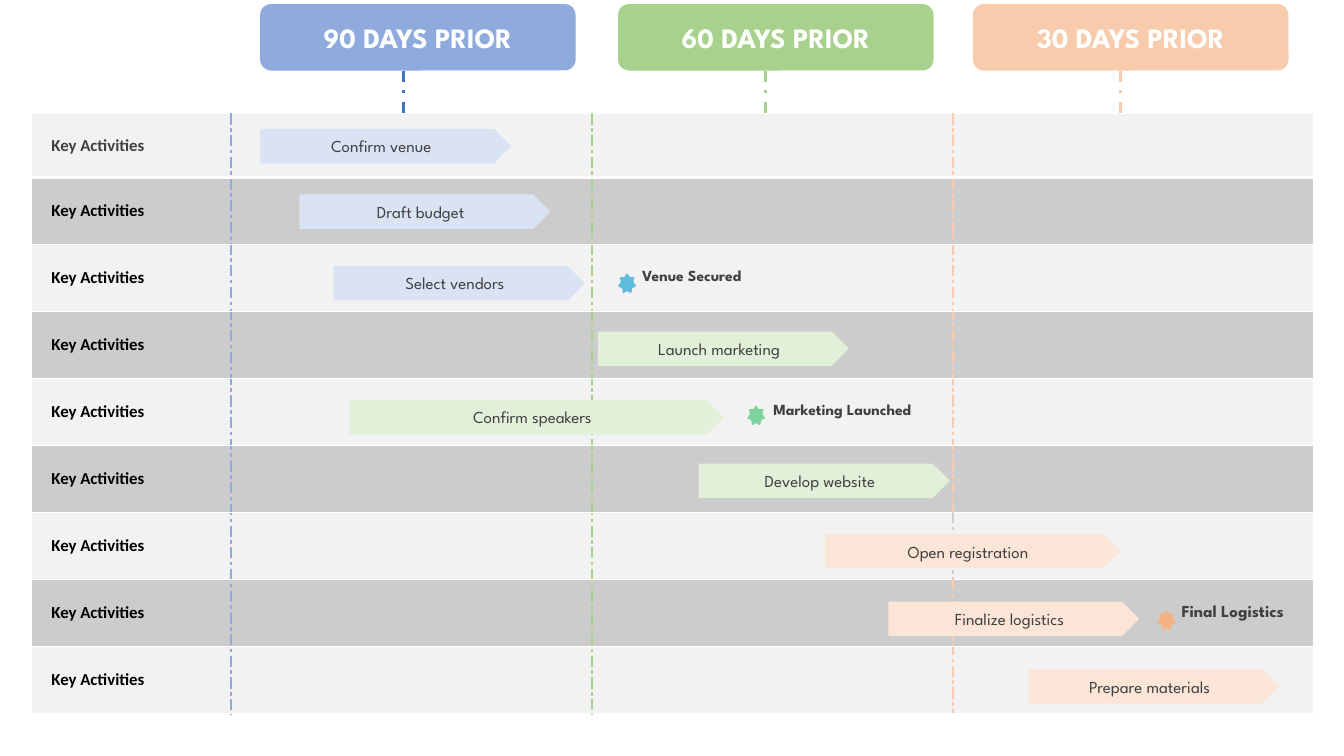
from lxml import etree
from pptx import Presentation
from pptx.dml.color import RGBColor
from pptx.enum.dml import MSO_LINE
from pptx.enum.shapes import MSO_CONNECTOR, MSO_SHAPE
from pptx.enum.text import MSO_ANCHOR, PP_ALIGN
from pptx.oxml.ns import qn
from pptx.util import Inches, Pt

WHITE = RGBColor(0xFF, 0xFF, 0xFF)
BLACK = RGBColor(0x00, 0x00, 0x00)
CHARCOAL = RGBColor(0x40, 0x40, 0x40)
LIGHT_ROW = RGBColor(0xF2, 0xF2, 0xF2)
DARK_ROW = RGBColor(0xCC, 0xCC, 0xCC)
GRAY_DIVIDER = RGBColor(0xD0, 0xCE, 0xCE)
BLUE = RGBColor(0x8F, 0xAA, 0xDC)
GREEN = RGBColor(0xA9, 0xD1, 0x8E)
PEACH = RGBColor(0xF8, 0xCB, 0xAD)
STEM_BLUE = RGBColor(0x44, 0x72, 0xC4)
PALE_BLUE = RGBColor(0xDA, 0xE3, 0xF3)
PALE_GREEN = RGBColor(0xE2, 0xF0, 0xD9)
PALE_PEACH = RGBColor(0xFB, 0xE5, 0xD6)
STAR_BLUE = RGBColor(0x5D, 0xBB, 0xDC)
STAR_GREEN = RGBColor(0x7E, 0xD3, 0x9C)
STAR_ORANGE = RGBColor(0xF4, 0xB1, 0x83)

DISPLAY_FONT = "League Spartan"
ROW_COUNT = 9
GRID_LEFT, GRID_TOP, GRID_HEIGHT = 0.31, 1.13, 5.95
FIRST_ROW_HEIGHT = 0.63
COLUMN_WIDTHS = [1.98, 3.58, 3.58, 3.58]
DIVIDERS = [WHITE, BLUE, GREEN, PEACH, WHITE]

# Phase: title, left, colour, stem x, stem colour
PHASES = [
    ("90 DAYS PRIOR", 2.58, BLUE, 4.0, STEM_BLUE),
    ("60 DAYS PRIOR", 6.13, GREEN, 7.59, GREEN),
    ("30 DAYS PRIOR", 9.65, PEACH, 11.11, PEACH),
]
# Activity: name, left, top, width, colour
ACTIVITIES = [
    ("Confirm venue", 2.58, 1.28, 2.49, PALE_BLUE),
    ("Draft budget", 2.97, 1.93, 2.49, PALE_BLUE),
    ("Select vendors", 3.31, 2.64, 2.49, PALE_BLUE),
    ("Launch marketing", 5.93, 3.29, 2.49, PALE_GREEN),
    ("Confirm speakers", 3.47, 3.97, 3.71, PALE_GREEN),
    ("Develop website", 6.93, 4.6, 2.49, PALE_GREEN),
    ("Open registration", 8.18, 5.3, 2.93, PALE_PEACH),
    ("Finalize logistics", 8.81, 5.97, 2.49, PALE_PEACH),
    ("Prepare materials", 10.2, 6.64, 2.49, PALE_PEACH),
]
# Milestone: name, row, column, indent, text size, star left, star top, colour
MILESTONES = [
    ("Venue Secured", 2, 2, 0.5, 11, 6.13, 2.71, STAR_BLUE),
    ("Marketing Launched", 4, 2, 1.8, 11, 7.41, 4.02, STAR_GREEN),
    ("Final Logistics", 7, 3, 2.27, 12, 11.48, 6.05, STAR_ORANGE),
]


def write_text(frame, text, size=12, font=DISPLAY_FONT, color=CHARCOAL,
               bold=False, align=PP_ALIGN.CENTER):
    paragraph = frame.paragraphs[0]
    paragraph.alignment = align
    run = paragraph.add_run()
    run.text = text
    run.font.size = Pt(size)
    run.font.name = font
    run.font.bold = bold
    run.font.color.rgb = color


def add_block(slide, kind, left, top, width, height, color):
    block = slide.shapes.add_shape(
        kind, Inches(left), Inches(top), Inches(width), Inches(height))
    block.shadow.inherit = False
    block.fill.solid()
    block.fill.fore_color.rgb = color
    block.line.fill.background()
    block.text_frame.vertical_anchor = MSO_ANCHOR.MIDDLE
    return block


def add_stem(slide, x, color):
    stem = slide.shapes.add_connector(
        MSO_CONNECTOR.STRAIGHT, Inches(x), Inches(0.7), Inches(x), Inches(GRID_TOP))
    stem.line.color.rgb = color
    stem.line.width = Pt(2)
    stem.line.dash_style = MSO_LINE.DASH_DOT
    etree.SubElement(stem._element.spPr, qn("a:effectLst"))


def set_borders(cell, borders):
    """Takes side -> (colour, width); the lines must precede the cell's fill."""
    properties = cell._tc.get_or_add_tcPr()
    for position, side in enumerate("LRTB"):
        color, width = borders[side]
        line = etree.Element(qn(f"a:ln{side}"), w=str(Pt(width)))
        fill = etree.SubElement(line, qn("a:solidFill"))
        etree.SubElement(fill, qn("a:srgbClr"), val=str(color))
        dash = "solid" if color == WHITE else "dashDot"
        etree.SubElement(line, qn("a:prstDash"), val=dash)
        properties.insert(position, line)


def write_cell(cell, text, indent, **text_format):
    cell.margin_left = Inches(indent)
    cell.vertical_anchor = MSO_ANCHOR.MIDDLE
    write_text(cell.text_frame, text, bold=True, align=PP_ALIGN.LEFT, **text_format)


def add_grid(slide):
    grid = slide.shapes.add_table(
        ROW_COUNT, len(COLUMN_WIDTHS), Inches(GRID_LEFT), Inches(GRID_TOP),
        Inches(sum(COLUMN_WIDTHS)), Inches(GRID_HEIGHT)).table
    grid.first_row = False
    grid.horz_banding = False
    for column, width in zip(grid.columns, COLUMN_WIDTHS):
        column.width = Inches(width)

    other_height = (GRID_HEIGHT - FIRST_ROW_HEIGHT) / (ROW_COUNT - 1)
    for r, row in enumerate(grid.rows):
        row.height = Inches(other_height if r else FIRST_ROW_HEIGHT)
        dividers = list(DIVIDERS)
        if r == 6:
            dividers[3] = GRAY_DIVIDER
        for c, cell in enumerate(row.cells):
            cell.fill.solid()
            cell.fill.fore_color.rgb = DARK_ROW if r % 2 else LIGHT_ROW
            left, right = dividers[c:c + 2]
            set_borders(cell, {
                "L": (left, 1 if left == WHITE else 1.5),
                "R": (right, 1 if right == WHITE else 1.5),
                "T": (WHITE, 3 if r == 1 else 1),
                "B": (WHITE, 3 if r == 0 else 1),
            })
        write_cell(row.cells[0], "Key Activities", 0.2, font="Calibri",
                   color=BLACK if r else CHARCOAL)
    return grid


def main():
    deck = Presentation()
    deck.slide_width, deck.slide_height = Inches(13.33), Inches(7.5)
    slide = deck.slides.add_slide(deck.slide_layouts[6])

    # Activity grid
    grid = add_grid(slide)

    # Activity arrows
    for name, left, top, width, color in ACTIVITIES:
        arrow = add_block(slide, MSO_SHAPE.PENTAGON, left, top, width, 0.34, color)
        write_text(arrow.text_frame, name)

    # Milestones
    for name, row, column, indent, size, left, top, color in MILESTONES:
        write_cell(grid.cell(row, column), name, indent, size=size)
        add_block(slide, MSO_SHAPE.STAR_7_POINT, left, top, 0.18, 0.2, color)

    # Phase headers with their stems
    for title, left, color, stem_x, stem_color in PHASES:
        header = add_block(slide, MSO_SHAPE.ROUNDED_RECTANGLE, left, 0.04, 3.13, 0.66, color)
        write_text(header.text_frame, title, size=20, color=WHITE, bold=True)
        add_stem(slide, stem_x, stem_color)

    deck.save("out.pptx")


if __name__ == "__main__":
    main()
